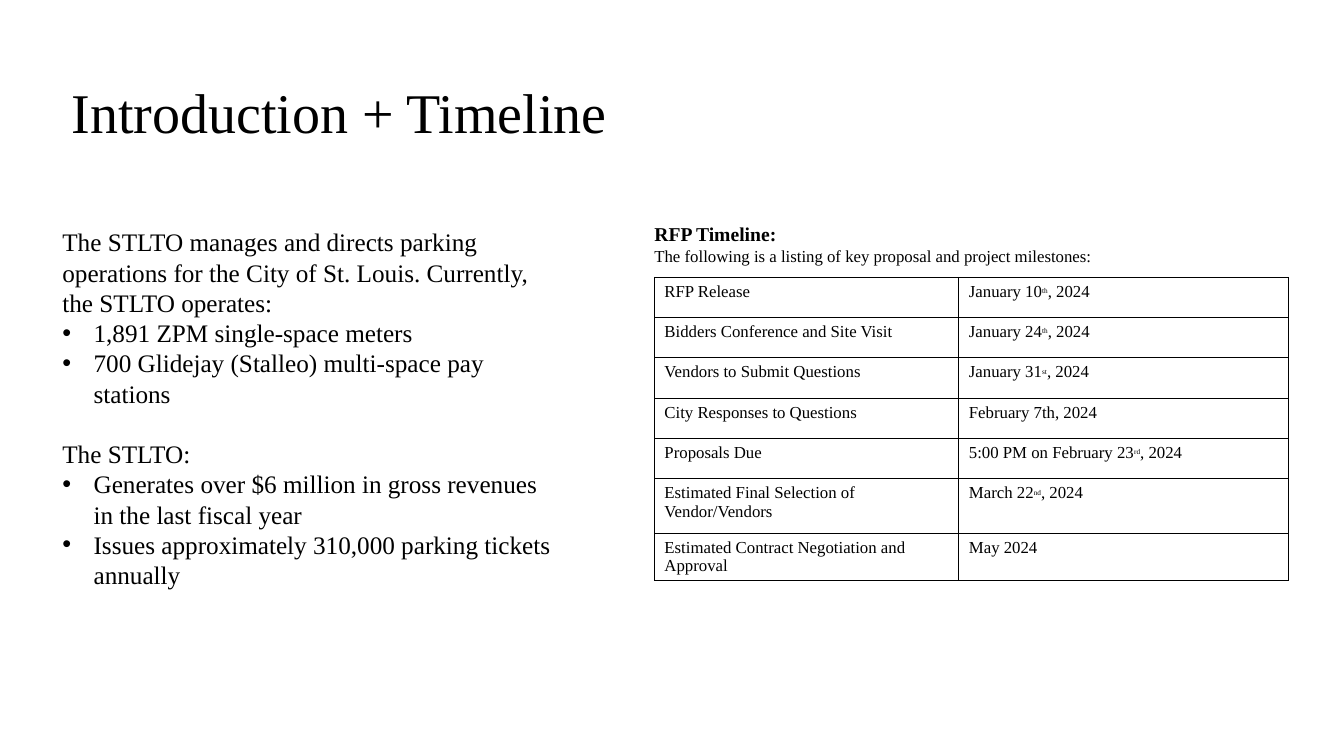
from lxml.etree import SubElement
from pptx import Presentation
from pptx.dml.color import RGBColor
from pptx.enum.shapes import MSO_SHAPE
from pptx.enum.text import MSO_ANCHOR, PP_ALIGN
from pptx.oxml.ns import qn
from pptx.util import Inches, Pt

FONT = "Times New Roman"
COLORS = {"ink": "000000", "paper": "FFFFFF"}

# Each date is (start, raised ordinal, rest).
MILESTONES = [
    ("RFP Release", ("January 10", "th", ", 2024")),
    ("Bidders Conference and Site Visit", ("January 24", "th", ", 2024")),
    ("Vendors to Submit Questions", ("January 31", "st", ", 2024")),
    ("City Responses to Questions", ("February 7th, 2024", "", "")),
    ("Proposals Due", ("5:00 PM on February 23", "rd", ", 2024")),
    ("Estimated Final Selection of Vendor/Vendors", ("March 22", "nd", ", 2024")),
    ("Estimated Contract Negotiation and Approval", ("May 2024", "", "")),
]
COLUMN_WIDTHS = [3.02, 3.27]
ROW_HEIGHTS = [0.4] * 5 + [0.54, 0.47]

OPERATIONS = [
    ("The STLTO manages and directs parking operations for the City of St. Louis. "
     "Currently, the STLTO operates:",
     ["1,891 ZPM single-space meters",
      "700 Glidejay (Stalleo) multi-space pay stations"]),
    ("The STLTO:",
     ["Generates over $6 million in gross revenues in the last fiscal year",
      "Issues approximately 310,000 parking tickets annually"]),
]
BODY_LINE = Pt(21.6)


def rgb(name):
    return RGBColor.from_string(COLORS[name])


def add_text(p, text, size=12, bold=False, raised=False):
    r = p.add_run()
    r.text = text
    r.font.name = FONT
    r.font.size = Pt(size)
    r.font.bold = bold
    r.font.color.rgb = rgb("ink")
    if raised:
        r.font._element.set("baseline", "30000")
    return r


def next_paragraph(tf):
    """Return the unused first paragraph, or a new one."""
    first = tf.paragraphs[0]
    return tf.add_paragraph() if first.runs else first


def add_bullet(p, indent=0.31):
    pPr = p._p.get_or_add_pPr()
    pPr.set("marL", str(Inches(indent)))
    pPr.set("indent", str(-Inches(indent)))
    SubElement(pPr, qn("a:buFont"), typeface="Arial")
    SubElement(pPr, qn("a:buChar"), char="•")


def set_borders(cell, width=0.6):
    tcPr = cell._tc.get_or_add_tcPr()
    for side in ("lnL", "lnR", "lnT", "lnB"):
        ln = SubElement(tcPr, qn(f"a:{side}"), w=str(Pt(width)))
        fill = SubElement(ln, qn("a:solidFill"))
        SubElement(fill, qn("a:srgbClr"), val=COLORS["ink"])


def set_title(s, text):
    title = s.shapes.title
    title.left, title.top = Inches(0.61), Inches(0.42)
    title.width, title.height = Inches(11.5), Inches(1.45)
    tf = title.text_frame
    tf.vertical_anchor = MSO_ANCHOR.MIDDLE
    p = tf.paragraphs[0]
    p.alignment = PP_ALIGN.LEFT
    p.line_spacing = 0.9
    add_text(p, text, size=40)


def add_operations(s):
    sp = s.shapes.add_textbox(Inches(0.52), Inches(2.2), Inches(5.05), Inches(3.7))
    tf = sp.text_frame
    tf.word_wrap = True
    for i, (lead, points) in enumerate(OPERATIONS):
        for j, text in enumerate([lead] + points):
            p = next_paragraph(tf)
            p.line_spacing = BODY_LINE
            if i and not j:
                p.space_before = BODY_LINE
            if j:
                add_bullet(p)
            add_text(p, text, size=18)


def add_timeline_heading(s):
    sp = s.shapes.add_shape(MSO_SHAPE.RECTANGLE, Inches(6.49), Inches(2.2),
                            Inches(4.62), Inches(0.44))
    sp.shadow.inherit = False
    sp.fill.solid()
    sp.fill.fore_color.rgb = rgb("paper")
    sp.line.fill.background()
    tf = sp.text_frame
    tf.word_wrap = True
    tf.vertical_anchor = MSO_ANCHOR.MIDDLE
    tf.margin_left = tf.margin_right = tf.margin_top = tf.margin_bottom = 0
    for text, size, bold in (
        ("RFP Timeline:", 14, True),
        ("The following is a listing of key proposal and project milestones:", 12, False),
    ):
        p = next_paragraph(tf)
        p.alignment = PP_ALIGN.LEFT
        add_text(p, text, size=size, bold=bold)


def add_timeline(s):
    table = s.shapes.add_table(len(MILESTONES), len(COLUMN_WIDTHS), Inches(6.49), Inches(2.75),
                               Inches(sum(COLUMN_WIDTHS)), Inches(sum(ROW_HEIGHTS))).table
    table.first_row = table.horz_banding = False
    for column, width in zip(table.columns, COLUMN_WIDTHS):
        column.width = Inches(width)
    for i, (milestone, (start, ordinal, rest)) in enumerate(MILESTONES):
        table.rows[i].height = Inches(ROW_HEIGHTS[i])
        name, date = table.cell(i, 0), table.cell(i, 1)
        for cell in (name, date):
            set_borders(cell)
            cell.fill.background()
        add_text(name.text_frame.paragraphs[0], milestone)
        p = date.text_frame.paragraphs[0]
        add_text(p, start)
        if ordinal:
            add_text(p, ordinal, size=9, raised=True)
            add_text(p, rest)


def main():
    prs = Presentation()
    prs.slide_width, prs.slide_height = Inches(13.33), Inches(7.5)
    s = prs.slides.add_slide(prs.slide_layouts[5])
    set_title(s, "Introduction + Timeline")
    add_timeline(s)
    add_timeline_heading(s)
    add_operations(s)
    prs.save("out.pptx")


if __name__ == "__main__":
    main()
